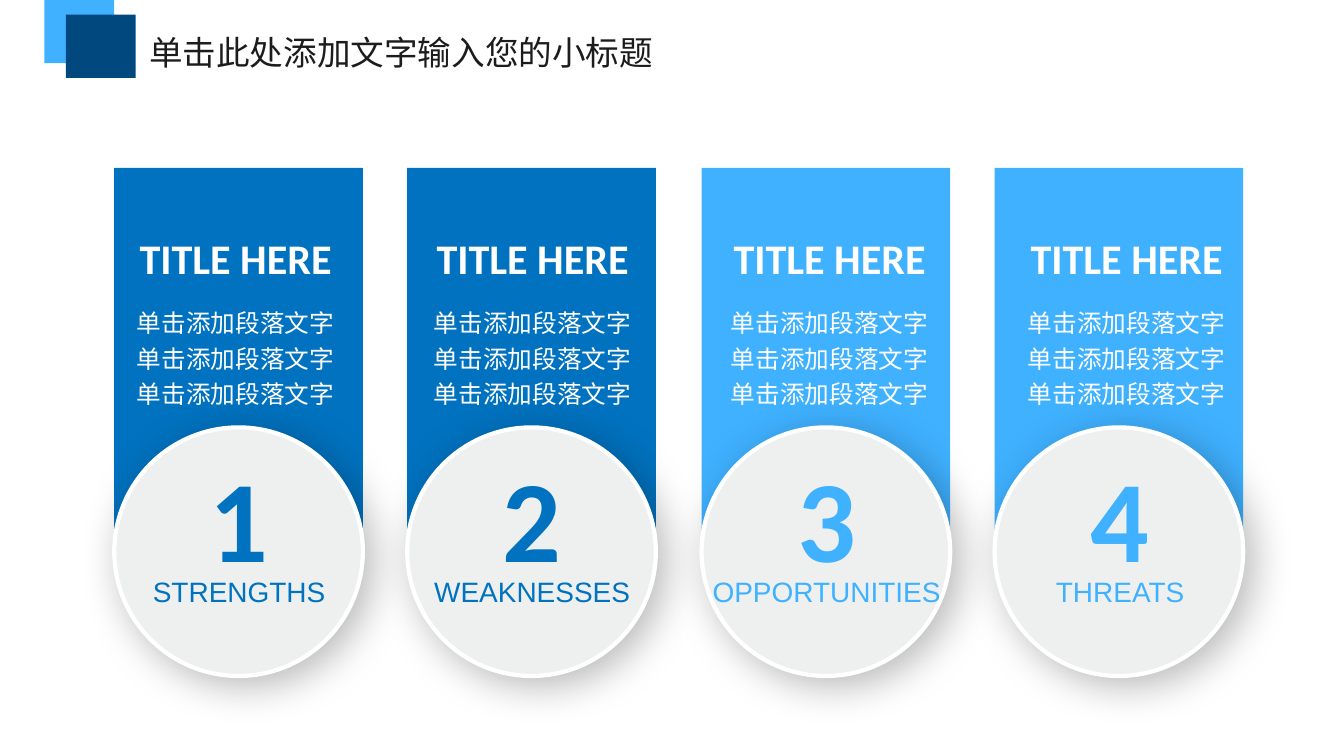
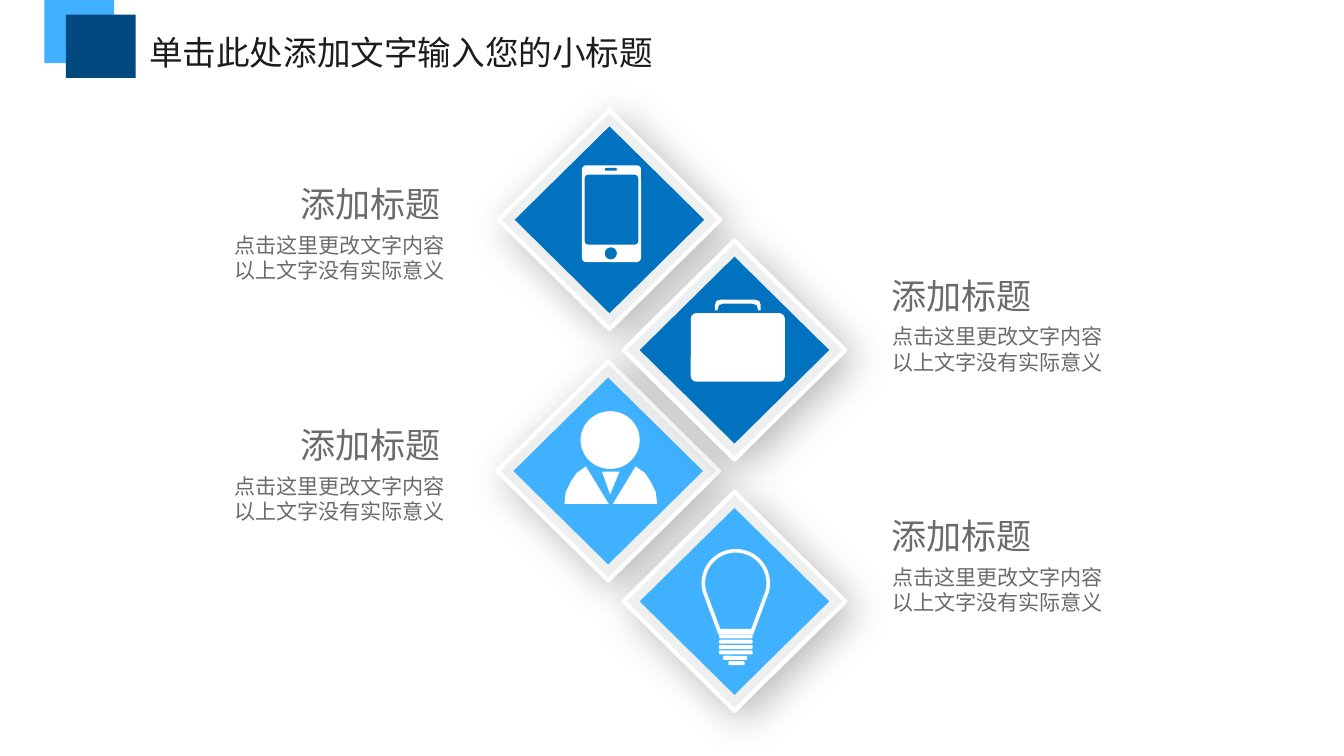
import math
from dataclasses import dataclass

import pptx
import pptx.dml.color
import pptx.enum.shapes
import pptx.enum.text
import pptx.oxml
import pptx.oxml.ns
import pptx.util
from lxml import etree

px = 9144
kinds = pptx.enum.shapes.MSO_SHAPE
sides = pptx.enum.text.PP_ALIGN
qn = pptx.oxml.ns.qn


@dataclass(frozen=True)
class Theme:
    sky: str = "3FB1FF"
    blue: str = "0072BF"
    navy: str = "00487E"
    white: str = "FFFFFF"
    pale: str = "EEF0F0"
    ink: str = "1C1C1C"
    gray: str = "6B6B6B"
    han: str = "Noto Sans CJK SC"
    bold: str = "Calibri"
    sans: str = "Arial"
    head: float = 18
    name: float = 22.6
    body: float = 13.2
    digit: float = 62.1
    label: float = 18.8
    note: float = 11.3


look = Theme()


def write(box, lines, size, tint, face=look.han, side=sides.LEFT, wrap=True, bold=False):
    frame = box.text_frame
    frame.text = "\n".join(lines)
    frame.word_wrap = wrap
    frame.auto_size = pptx.enum.text.MSO_AUTO_SIZE.SHAPE_TO_FIT_TEXT
    for para in frame.paragraphs:
        para.alignment = side
        para.font.size = pptx.util.Pt(size)
        para.font.bold = bold
        para.font.name = face
        para.font.color.rgb = pptx.dml.color.RGBColor.from_string(tint)
        mark = para._p.pPr.find(qn("a:defRPr"))
        etree.SubElement(mark, qn("a:ea")).set("typeface", face)
    return frame


def draw(page, kind, box, tint, bend=None, rim=False):
    if kind is None:
        pen = None
        for loop in box:
            dots = [(x * px, y * px) for x, y in loop]
            if pen is None:
                pen = page.shapes.build_freeform(*dots[0], scale=1.0)
            else:
                pen.move_to(*dots[0])
            pen.add_line_segments(dots[1:], close=True)
        form = pen.convert_to_shape()
    else:
        form = page.shapes.add_shape(kind, *[v * px for v in box])
    form.shadow.inherit = False
    form.fill.solid()
    form.fill.fore_color.rgb = pptx.dml.color.RGBColor.from_string(tint)
    if bend is not None:
        form.adjustments[0] = bend
    if rim:
        form.line.color.rgb = pptx.dml.color.RGBColor.from_string(look.white)
        form.line.width = pptx.util.Pt(2.25)
        glow = form._element.spPr.find(qn("a:effectLst"))
        glow.append(pptx.oxml.parse_xml(
            '<a:outerShdw xmlns:a="http://schemas.openxmlformats.org/drawingml/2006/main" '
            'blurRad="279400" dist="76200" dir="2700000" algn="tl" rotWithShape="0">'
            '<a:srgbClr val="000000"><a:alpha val="28000"/></a:srgbClr></a:outerShdw>'))
    else:
        form.line.fill.background()
    return form


deck = pptx.Presentation()
deck.slide_width = 1000 * px
deck.slide_height = deck.slide_width * 9 // 16

pages = []
for _ in range(2):
    page = deck.slides.add_slide(deck.slide_layouts[5])
    draw(page, kinds.RECTANGLE, (33, 0, 52, 47), look.sky)
    draw(page, kinds.RECTANGLE, (49, 11, 52, 47), look.navy)
    veil = draw(page, kinds.RECTANGLE, (0, 79, 1000, 465), look.white)
    tone = veil._element.spPr.find(".//" + qn("a:srgbClr"))
    etree.SubElement(tone, qn("a:alpha")).set("val", "62000")
    head = page.shapes.title
    head.left, head.top, head.width, head.height = [v * px for v in (101, 19, 399, 40)]
    frame = write(head, ["单击此处添加文字输入您的小标题"], look.head, look.ink, wrap=False)
    frame.vertical_anchor = pptx.enum.text.MSO_ANCHOR.MIDDLE
    pages.append(page)

swot, grid = pages

parts = [
    ("strengths", 150, look.blue),
    ("weaknesses", 168, look.blue),
    ("opportunities", 192, look.sky),
    ("threats", 117, look.sky),
]
for i, (word, wide, tint) in enumerate(parts):
    step = round(655 * i / 3)
    plate = draw(swot, kinds.PENTAGON, (7 + step, 203, 341, 185), tint, 0.318)
    plate.rotation = 90
    box = swot.shapes.add_textbox((92 + 221 * i) * px, 220 * px, 176 * px, 90 * px)
    frame = write(box, ["单击添加段落文字" * 3], look.body, look.white)
    frame.paragraphs[0].line_spacing = 1.2
    box = swot.shapes.add_textbox((94 + 221 * i) * px, 168 * px, 187 * px, 48 * px)
    write(box, ["TITLE HERE"], look.name, look.white, look.bold, bold=True)

for i, (word, wide, tint) in enumerate(parts):
    left = 85 + round(655 * i / 3)
    draw(swot, kinds.OVAL, (left, 318, 185, 185), look.pale, rim=True)
    box = swot.shapes.add_textbox((left + 61) * px, 327 * px, 64 * px, 115 * px)
    write(box, [str(i + 1)], look.digit, tint, look.bold, sides.CENTER, False, True)
    box = swot.shapes.add_textbox((left + 93 - wide // 2) * px, 417 * px, wide * px, 42 * px)
    frame = write(box, [word], look.label, tint, look.sans, sides.CENTER, False)
    frame.paragraphs[0]._p.pPr.find(qn("a:defRPr")).set("cap", "small")

for x, y, tint in [
    (371, 82, look.blue),
    (370, 269, look.sky),
    (464, 179, look.blue),
    (464, 366, look.sky),
]:
    draw(grid, kinds.DIAMOND, (x, y, 165, 163), look.pale, rim=True)
    draw(grid, kinds.DIAMOND, (x + 12, y + 12, 141, 139), tint)

draw(grid, kinds.ROUNDED_RECTANGLE, (433, 123, 44, 72), look.white, 0.07)
draw(grid, kinds.ROUNDED_RECTANGLE, (435, 130, 40, 52), look.blue, 0.07)
draw(grid, kinds.ROUNDED_RECTANGLE, (450, 125, 9, 2), look.blue, 0.5)
draw(grid, kinds.OVAL, (450, 184, 9, 9), look.blue)

coat = [(436, 347), (429, 352), (425, 358), (421, 366), (420, 375), (453, 375)]
draw(grid, None, [coat], look.white)
draw(grid, None, [[(909 - x, y) for x, y in coat]], look.white)
draw(grid, kinds.OVAL, (432, 306, 44, 43), look.white)
draw(grid, None, [[(448, 351), (454, 368), (461, 351)]], look.white)

draw(grid, kinds.ROUNDED_RECTANGLE, (514, 233, 70, 51), look.white, 0.08)
grip = [(532, 231), (532, 227), (533, 224), (536, 223)]
hole = [(538, 226), (535, 227), (534, 230), (534, 231)]
loop = grip + [(1098 - x, y) for x, y in grip[::-1]]
loop += [(1098 - x, y) for x, y in hole[::-1]] + hole
draw(grid, None, [loop], look.white)

bulb = []
for size, half, foot in [(25.5, 13, 472), (22.8, 11.5, 468)]:
    turns = [math.radians(a) for a in range(165, 376, 6)]
    loop = [(547.5 + size * math.cos(a), 434 + size * math.sin(a)) for a in turns]
    bulb.append(loop + [(547.5 + half, foot), (547.5 - half, foot)])
draw(grid, None, bulb, look.white)
for i, wide in enumerate([25, 25, 25, 25, 18, 12]):
    bar = (547.5 - wide / 2, 472 + 4 * i, wide, 3)
    draw(grid, kinds.ROUNDED_RECTANGLE, [round(v) for v in bar], look.white, 0.3)

for x, y, shift, side in [
    (216, 132, 57, sides.CENTER),
    (216, 311, 57, sides.CENTER),
    (656, 200, 2, sides.LEFT),
    (656, 379, 2, sides.LEFT),
]:
    box = grid.shapes.add_textbox(x * px, y * px, 120 * px, 39 * px)
    frame = write(box, ["添加标题"], look.label, look.gray, side=side, wrap=False)
    frame.margin_left = frame.margin_right = 7 * px
    frame.margin_top = frame.margin_bottom = 4 * px
    box = grid.shapes.add_textbox((x - shift) * px, (y + 36) * px, 187 * px, 48 * px)
    write(box, ["点击这里更改文字内容", "以上文字没有实际意义"], look.note, look.gray, side=side)

deck.save("out.pptx")
